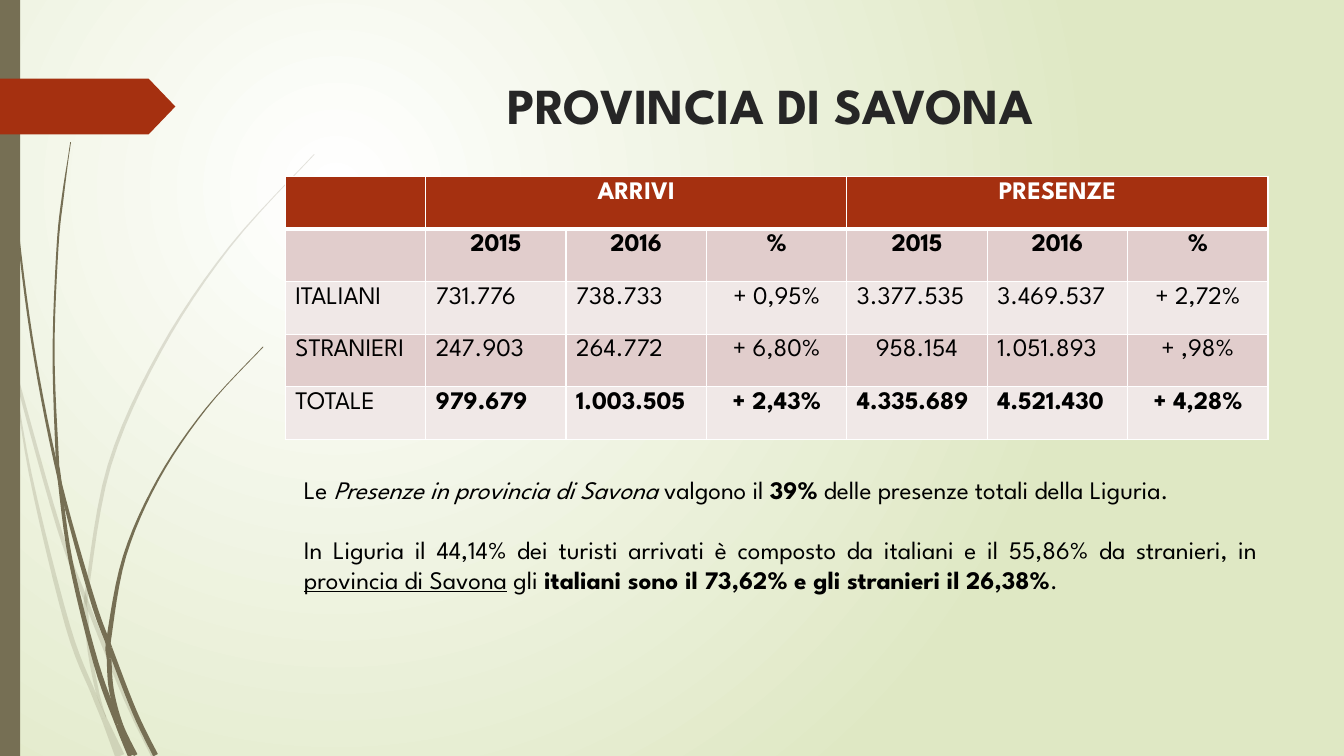
"""Build the tourism slide for the province of Savona."""
from dataclasses import dataclass
from math import hypot

from lxml.etree import SubElement
from pptx import Presentation
from pptx.dml.color import RGBColor as RGB
from pptx.enum.shapes import MSO_SHAPE as SHAPE
from pptx.enum.text import MSO_ANCHOR as ANCHOR, MSO_AUTO_SIZE as AUTO, PP_ALIGN as ALIGN
from pptx.oxml import parse_xml
from pptx.oxml.ns import nsdecls, qn
from pptx.util import Cm, Pt


@dataclass(frozen=True)
class Theme:
    font: str = "League Spartan"
    title_size: int = 36
    text_size: int = 18
    title: str = "262626"
    text: str = "000000"
    white: str = "FFFFFF"
    backdrop: str = "DFE8C4"
    accent: str = "A53010"
    stem: str = "766F54"
    band_dark: str = "E1CDCC"
    band_light: str = "F0E8E7"


@dataclass(frozen=True)
class Blade:
    knots: list[tuple[float, float, float]]
    joints: tuple[int, ...]
    alpha: int = 100


@dataclass(frozen=True)
class Span:
    text: str
    bold: bool = False
    italic: bool = False
    underline: bool = False


T = Theme()
STEPS = 6
BLADES = [
    Blade([(0, 7.3, 0.05), (0.28, 8.89, 0.07), (0.43, 9.55, 0.08), (1.47, 13.26, 0.1),
           (2.18, 15.16, 0.1), (3.17, 17.6, 0.11), (3.87, 19.05, 0.12)], (1, 4), 20),
    Blade([(0.28, 8.89, 0), (0.76, 11.92, 0.07), (1.7, 15.75, 0.12), (2.36, 17.48, 0.12),
           (2.62, 18.1, 0.14), (3.02, 19.05, 0.24)], (4,), 20),
    Blade([(7.92, 3.89, 0), (5.79, 6.22, 0.04), (4.04, 8.84, 0.07), (2.76, 11.72, 0.09),
           (2.2, 14.83, 0.09), (2.18, 15.5, 0.1), (2.26, 16.41, 0.1), (2.46, 17.45, 0.08),
           (2.67, 18.06, 0)], (4, 5), 20),
    Blade([(0.09, 0, 0.02), (0.11, 1.22, 0.03), (0.19, 2.79, 0.03), (0.46, 5.92, 0.05),
           (0.88, 9.02, 0.06), (1.5, 12.1, 0.08), (2.3, 15.01, 0.12),
           (2.77, 16.33, 0.12), (3.4, 17.96, 0.12), (3.92, 19.03, 0.13)], (5, 7)),
    Blade([(1.78, 3.58, 0), (1.59, 4.9, 0.05), (1.45, 6.22, 0.05), (1.35, 8.86, 0.05),
           (1.44, 11.46, 0.08), (1.49, 12, 0.09), (1.78, 14.12, 0.1), (2.42, 16.71, 0.13),
           (2.98, 18.25, 0.15), (3.33, 19.03, 0.22)], (5, 8)),
    Blade([(6.63, 8.74, 0), (5.19, 10.3, 0.03), (3.99, 12.07, 0.05), (3.14, 14.01, 0.08),
           (2.75, 16.05, 0.12), (2.75, 16.6, 0.12), (2.81, 17.4, 0.12), (3.05, 18.26, 0.1),
           (3.42, 19.03, 0.1)], (4, 5, 7)),
]
ROWS = [
    ["", "ARRIVI", "", "", "PRESENZE", "", ""],
    ["", "2015", "2016", "%", "2015", "2016", "%"],
    ["ITALIANI", "731.776", "738.733", "+ 0,95%", "3.377.535", "3.469.537", "+ 2,72%"],
    ["STRANIERI", "247.903", "264.772", "+ 6,80%", "958.154", "1.051.893", "+ ,98%"],
    ["TOTALE", "979.679", "1.003.505", "+ 2,43%", "4.335.689", "4.521.430", "+ 4,28%"],
]
NOTES = [
    [Span("Le "), Span("Presenze in provincia di Savona", italic=True), Span(" valgono il "),
     Span("39%", bold=True), Span(" delle presenze totali della Liguria.")],
    [Span("In Liguria il 44,14% dei turisti arrivati è composto da italiani e il 55,86% "
          "da stranieri, in "),
     Span("provincia di Savona", underline=True), Span(" gli "),
     Span("italiani sono il 73,62% e gli stranieri il 26,38%", bold=True), Span(".")],
]


def put(obj, **values) -> None:
    for name, value in values.items():
        setattr(obj, name, value)


def add_run(p, span: Span, color: str = T.text, size: int = T.text_size) -> None:
    r = p.add_run()
    r.text = span.text
    put(r.font, name=T.font, size=Pt(size), bold=span.bold,
        italic=span.italic, underline=span.underline)
    r.font.color.rgb = RGB.from_string(color)


def paint(sp, color: str, alpha: int = 100) -> None:
    sp.shadow.inherit = False
    sp.fill.solid()
    sp.fill.fore_color.rgb = RGB.from_string(color)
    sp.line.fill.background()
    if alpha < 100:
        clr = sp._element.spPr.find(".//" + qn("a:srgbClr"))
        SubElement(clr, qn("a:alpha"), val=str(alpha * 1000))


def smooth(knots: list[tuple]) -> list[tuple]:
    ends = [knots[0], *knots, knots[-1]]
    points = []
    for a, b, c, d in zip(ends, ends[1:], ends[2:], ends[3:]):
        for t in (i / STEPS for i in range(STEPS)):
            points.append(tuple(
                q + t * ((r - p) + t * ((2 * p - 5 * q + 4 * r - s) + t * (3 * q - p - 3 * r + s))) / 2
                for p, q, r, s in zip(a, b, c, d)))
    return [*points, knots[-1]]


def add_blade(shapes, blade: Blade) -> None:
    spine = smooth(blade.knots)
    left, right = [], []
    for before, (x, y, width), after in zip([spine[0], *spine], spine, [*spine[1:], spine[-1]]):
        dx, dy = after[0] - before[0], after[1] - before[1]
        half = max(width, 0.02) / 2 / hypot(dx, dy)
        left.append((Cm(x - dy * half), Cm(y + dx * half)))
        right.append((Cm(x + dy * half), Cm(y - dx * half)))
    stops = [0, *(j * STEPS for j in blade.joints), len(spine) - 1]
    for start, end in zip(stops, stops[1:]):
        outline = left[start:end + 1] + right[start:end + 1][::-1]
        builder = shapes.build_freeform(*outline[0], scale=1.0)
        builder.add_line_segments(outline[1:], close=True)
        paint(builder.convert_to_shape(), T.stem, blade.alpha)


def set_background(s) -> None:
    fill = s.background.fill
    fill.gradient()
    for stop, color, place in zip(fill.gradient_stops, (T.white, T.backdrop), (0, 1)):
        stop.color.rgb = RGB.from_string(color)
        stop.position = place
    grad = s._element.find(".//" + qn("a:gradFill"))
    grad.replace(grad.find(qn("a:lin")), parse_xml(
        f'<a:path {nsdecls("a")} path="circle">'
        '<a:fillToRect l="50000" t="50000" r="100000" b="100000"/></a:path>'))


def set_borders(cell, header: bool) -> None:
    for i, side in enumerate("LRTB"):
        width = Pt(3 if header and side == "B" else 1)
        cell._tc.get_or_add_tcPr().insert(i, parse_xml(
            f'<a:ln{side} {nsdecls("a")} w="{width}"><a:solidFill>'
            f'<a:srgbClr val="{T.white}"/></a:solidFill></a:ln{side}>'))


def add_arrivals_table(shapes) -> None:
    table = shapes.add_table(len(ROWS), len(ROWS[0]), Cm(7.19), Cm(4.45),
                             Cm(24.77), Cm(6.62)).table
    put(table, first_row=False, horz_banding=False)
    for i, row in enumerate(ROWS):
        for j, text in enumerate(row):
            cell = table.cell(i, j)
            band = T.accent if i == 0 else T.band_dark if i % 2 else T.band_light
            cell.fill.solid()
            cell.fill.fore_color.rgb = RGB.from_string(band)
            set_borders(cell, i == 0)
            if text:
                p = cell.text_frame.paragraphs[0]
                p.alignment = ALIGN.CENTER if i < 2 or j in (3, 6) else ALIGN.LEFT
                bold = i < 2 or (i == len(ROWS) - 1 and j > 0)
                add_run(p, Span(text, bold), T.text if i else T.white)
    table.cell(3, 4).margin_left = Cm(0.73)
    for j in (1, 4):
        table.cell(0, j).merge(table.cell(0, j + 2))


def add_title(s) -> None:
    sp = s.shapes.title
    put(sp, left=Cm(7.2), top=Cm(1.73), width=Cm(24.77), height=Cm(2.24))
    tf = sp.text_frame
    put(tf, vertical_anchor=ANCHOR.TOP, auto_size=AUTO.NONE, word_wrap=True)
    p = tf.paragraphs[0]
    p.alignment = ALIGN.CENTER
    add_run(p, Span("PROVINCIA DI SAVONA ", bold=True), T.title, T.title_size)


def add_notes_text(shapes) -> None:
    tf = shapes.add_textbox(Cm(7.41), Cm(11.83), Cm(24.54), Cm(4.88)).text_frame
    tf.word_wrap = True
    for i, spans in enumerate(NOTES):
        p = tf.add_paragraph() if i else tf.paragraphs[0]
        put(p, alignment=ALIGN.JUSTIFY, space_before=Pt(21 if i else 0))
        for span in spans:
            add_run(p, span)


def main() -> None:
    prs = Presentation()
    put(prs, slide_width=Cm(33.87), slide_height=Cm(19.05))
    s = prs.slides.add_slide(prs.slide_layouts[5])
    set_background(s)
    for blade in BLADES:
        add_blade(s.shapes, blade)
    paint(s.shapes.add_shape(SHAPE.RECTANGLE, 0, 0, Cm(0.51), Cm(19.05)), T.stem)
    arrow = s.shapes.add_shape(SHAPE.PENTAGON, 0, Cm(1.98), Cm(4.42), Cm(1.41))
    arrow.adjustments[0] = 0.48
    paint(arrow, T.accent)
    add_title(s)
    add_arrivals_table(s.shapes)
    add_notes_text(s.shapes)
    prs.save("out.pptx")


if __name__ == "__main__":
    main()
